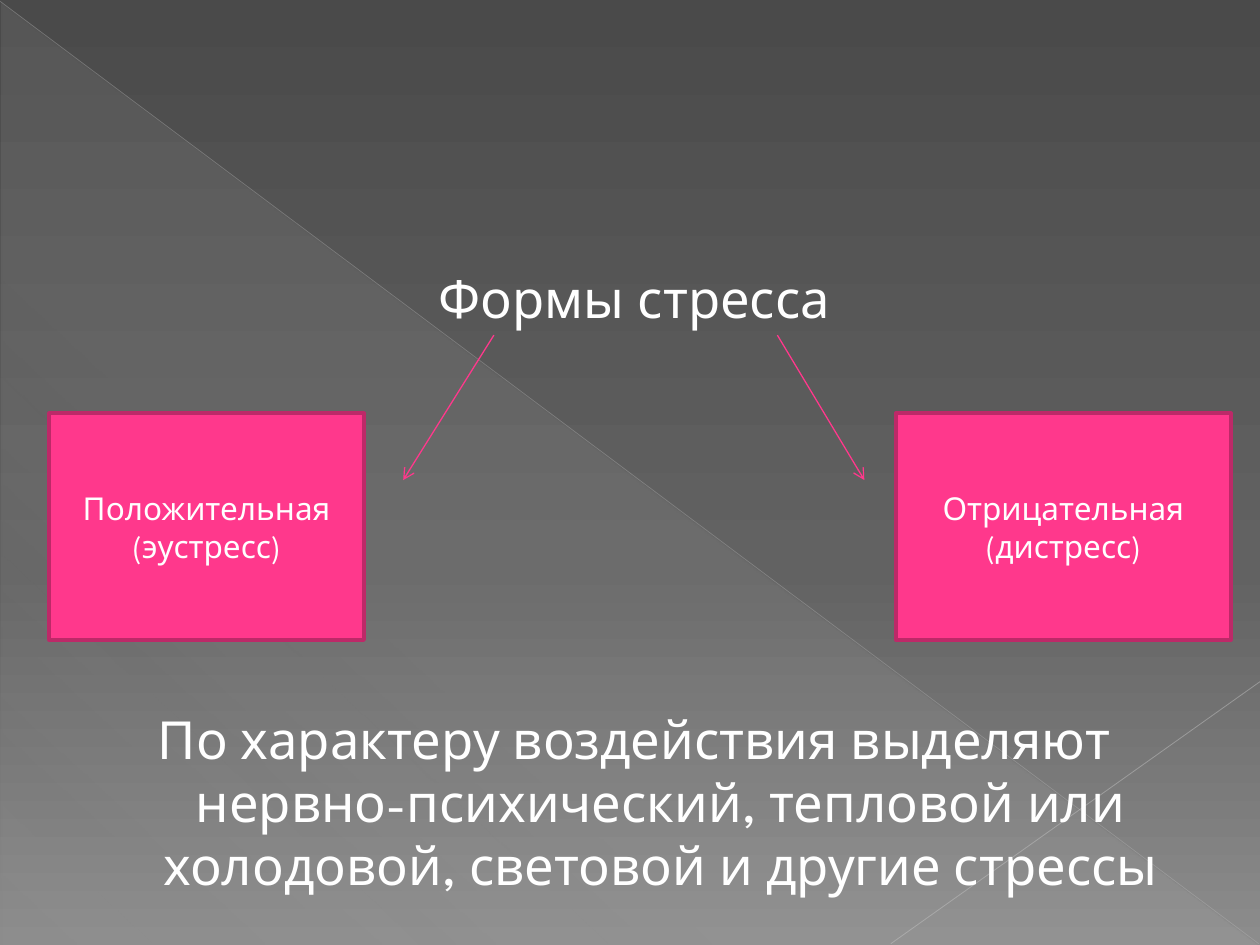
from lxml import etree
from pptx import Presentation
from pptx.dml.color import RGBColor
from pptx.enum.shapes import MSO_CONNECTOR, MSO_SHAPE
from pptx.enum.text import MSO_ANCHOR, PP_ALIGN
from pptx.oxml.ns import qn
from pptx.util import Inches, Pt

LINE, RECT, TRI = MSO_CONNECTOR.STRAIGHT, MSO_SHAPE.RECTANGLE, MSO_SHAPE.RIGHT_TRIANGLE
CENTER, MIDDLE = PP_ALIGN.CENTER, MSO_ANCHOR.MIDDLE
FONT = "League Spartan"
COLORS = {"text": "FFFFFF", "pink": "FF388C", "edge": "BD2968",
          "long": "BFBFBF", "short": "C6C6C6"}

# Content: gradient stops are position, colour, opacity in percent
BACK = [(0, "4A4A4A", 100), (60, "626262", 100), (100, "8C8C8C", 100)]
SHEEN = [(0, "D2D2D2", 10), (70, "D2D2D2", 8), (100, "D2D2D2", 1)]
RAYS = [((0, 0.01), (9.99, 7.49), "long", 0.39, 35),
        ((10, 5.41), (7.07, 7.49), "short", 0.47, 45)]
TEXTS = [("Формы стресса", 2.06, 0.6),
         ("По характеру воздействия выделяют нервно-психический, "
          "тепловой или холодовой, световой и другие стрессы", 5.56, 1.6)]
FORMS = [("Положительная (эустресс)", 0.39, 2.5),
         ("Отрицательная (дистресс)", 7.11, 2.66)]
ARROWS = [(3.92, 3.2), (6.17, 6.86)]


def rgb(name):
    return RGBColor.from_string(COLORS[name])


def add(node, tag, **attrs):
    return etree.SubElement(node, qn(tag), {k: str(v) for k, v in attrs.items()})


def shade(fill, stops, angle):
    fill.gradient()
    fill.gradient_angle = -angle % 360
    stop_list = fill.gradient_stops[0]._gs.getparent()
    for old in list(stop_list):
        stop_list.remove(old)
    for pos, color, alpha in stops:
        stop = add(stop_list, "a:gs", pos=pos * 1000)
        add(add(stop, "a:srgbClr", val=color), "a:alpha", val=alpha * 1000)


def draw_line(start, end, color, width):
    line = slide.shapes.add_connector(LINE, *map(Inches, start + end))
    line.line.color.rgb = rgb(color)
    line.line.width = Pt(width)
    add(line._element.spPr, "a:effectLst")
    return line.line._get_or_add_ln()


def write(frame, text, size):
    frame.word_wrap = True
    frame.text = text
    para = frame.paragraphs[0]
    para.alignment = CENTER
    font = para.runs[0].font
    font.name, font.size, font.color.rgb = FONT, Pt(size), rgb("text")
    return para


prs = Presentation()
prs.slide_width, prs.slide_height = Inches(10), Inches(7.5)
slide = prs.slides.add_slide(prs.slide_layouts[6])

# Backdrop
shade(slide.background.fill, BACK, 90)
corner = slide.shapes.add_shape(TRI, *map(Inches, (0.01, 0.02, 9.98, 7.48)))
corner.shadow.inherit = False
corner.line.fill.background()
shade(corner.fill, SHEEN, 133)
for start, end, color, width, alpha in RAYS:
    ln = draw_line(start, end, color, width)
    add(ln.find(".//" + qn("a:srgbClr")), "a:alpha", val=alpha * 1000)

# Heading and closing text, with a hanging indent
for text, top, height in TEXTS:
    box = slide.shapes.add_textbox(*map(Inches, (0.5, top, 9, height)))
    props = write(box.text_frame, text, 30)._p.get_or_add_pPr()
    props.set("marL", str(Inches(0.49)))
    props.set("indent", str(Inches(-0.42)))

# Two forms of stress and the arrows towards them
for (text, left, width), (tail, head) in zip(FORMS, ARROWS):
    ln = draw_line((tail, 2.66), (head, 3.81), "pink", 0.75)
    add(ln, "a:tailEnd", type="arrow")
    box = slide.shapes.add_shape(RECT, *map(Inches, (left, 3.28, width, 1.8)))
    box.shadow.inherit = False
    box.fill.solid()
    box.fill.fore_color.rgb = rgb("pink")
    box.line.color.rgb = rgb("edge")
    box.line.width = Pt(2)
    box.text_frame.vertical_anchor = MIDDLE
    write(box.text_frame, text, 18)

prs.save("out.pptx")
